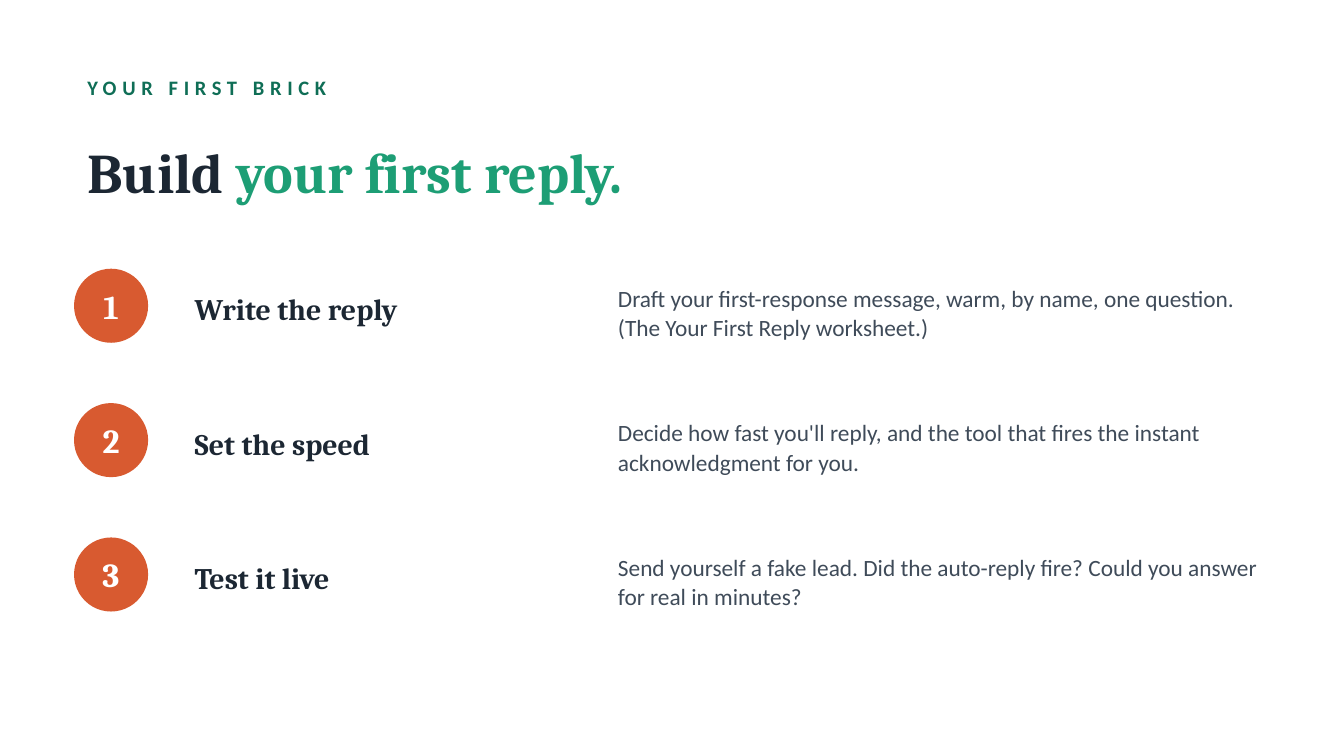
"""Build the slide that walks through writing a first reply in three steps."""
from pptx import Presentation
from pptx import util as u
from pptx.dml.color import RGBColor
from pptx.enum import shapes, text

STEPS = [
    ("Write the reply",
     "Draft your first-response message, warm, by name, one question. "
     "(The Your First Reply worksheet.)"),
    ("Set the speed",
     "Decide how fast you'll reply, and the tool that fires the instant "
     "acknowledgment for you."),
    ("Test it live",
     "Send yourself a fake lead. Did the auto-reply fire? "
     "Could you answer for real in minutes?"),
]
LEFT, FIRST_TOP, STEP_PITCH = 1.4, 5.08, 2.54


def color(value):
    return RGBColor.from_string(value)


class StepSlide:
    ink, green, dark_green, orange = "1C2733", "1D9E75", "0F6E56", "D85A30"
    white, grey = "FFFFFF", "3F4B59"
    formats = {
        "kicker": {"name": "Calibri", "size": u.Pt(11), "bold": True},
        "title": {"name": "Cambria", "size": u.Pt(30), "bold": True},
        "number": {"name": "Cambria", "size": u.Pt(18), "bold": True},
        "heading": {"name": "Cambria", "size": u.Pt(16), "bold": True},
        "detail": {"name": "Calibri", "size": u.Pt(12.5), "bold": False},
    }

    def __init__(self, presentation):
        self.slide = presentation.slides.add_slide(presentation.slide_layouts[5])

    def set_text(self, shape, style, runs, align=text.PP_ALIGN.LEFT, spacing=None):
        frame = shape.text_frame
        frame.word_wrap = True
        frame.auto_size = text.MSO_AUTO_SIZE.NONE
        frame.vertical_anchor = text.MSO_ANCHOR.MIDDLE
        paragraph = frame.paragraphs[0]
        paragraph.alignment = align
        paragraph.line_spacing = spacing
        for words, shade in runs:
            run = paragraph.add_run()
            run.text = words
            for name, value in self.formats[style].items():
                setattr(run.font, name, value)
            run.font.color.rgb = color(shade)
        return paragraph

    def title(self, box, runs):
        shape = self.slide.shapes.title
        for name, value in zip(("left", "top", "width", "height"), box):
            setattr(shape, name, u.Cm(value))
        self.set_text(shape, "title", runs)

    def label(self, box, style, words, shade, spacing=None):
        shape = self.slide.shapes.add_textbox(*map(u.Cm, box))
        return self.set_text(shape, style, [(words, shade)], spacing=spacing)

    def kicker(self, box, words):
        paragraph = self.label(box, "kicker", words, self.dark_green)
        paragraph.runs[0].font._element.set("spc", "300")

    def badge(self, left, top, size, number):
        shape = self.slide.shapes.add_shape(
            shapes.MSO_SHAPE.OVAL, *map(u.Cm, (left, top, size, size)))
        shape.shadow.inherit = False
        shape.fill.solid()
        shape.fill.fore_color.rgb = color(self.orange)
        shape.line.fill.background()
        for side in ("left", "top", "right", "bottom"):
            setattr(shape.text_frame, f"margin_{side}", 0)
        self.set_text(shape, "number", [(str(number), self.white)], text.PP_ALIGN.CENTER)

    def step(self, top, number, heading, detail):
        self.badge(LEFT, top, 1.4, number)
        self.label((3.43, top - 0.13, 7.62, 1.78), "heading", heading, self.ink)
        self.label((11.43, top - 0.13, 12.7, 1.9), "detail", detail, self.grey, 1.05)


def main():
    presentation = Presentation()
    presentation.slide_width, presentation.slide_height = u.Cm(25.4), u.Cm(14.29)
    page = StepSlide(presentation)
    page.kicker((LEFT, 1.27, 22.61, 0.76), "YOUR FIRST BRICK")
    page.title((LEFT, 2.16, 22.61, 2.16),
               [("Build ", page.ink), ("your first reply.", page.green)])
    for index, (heading, detail) in enumerate(STEPS):
        page.step(FIRST_TOP + index * STEP_PITCH, index + 1, heading, detail)
    presentation.save("out.pptx")


if __name__ == "__main__":
    main()
